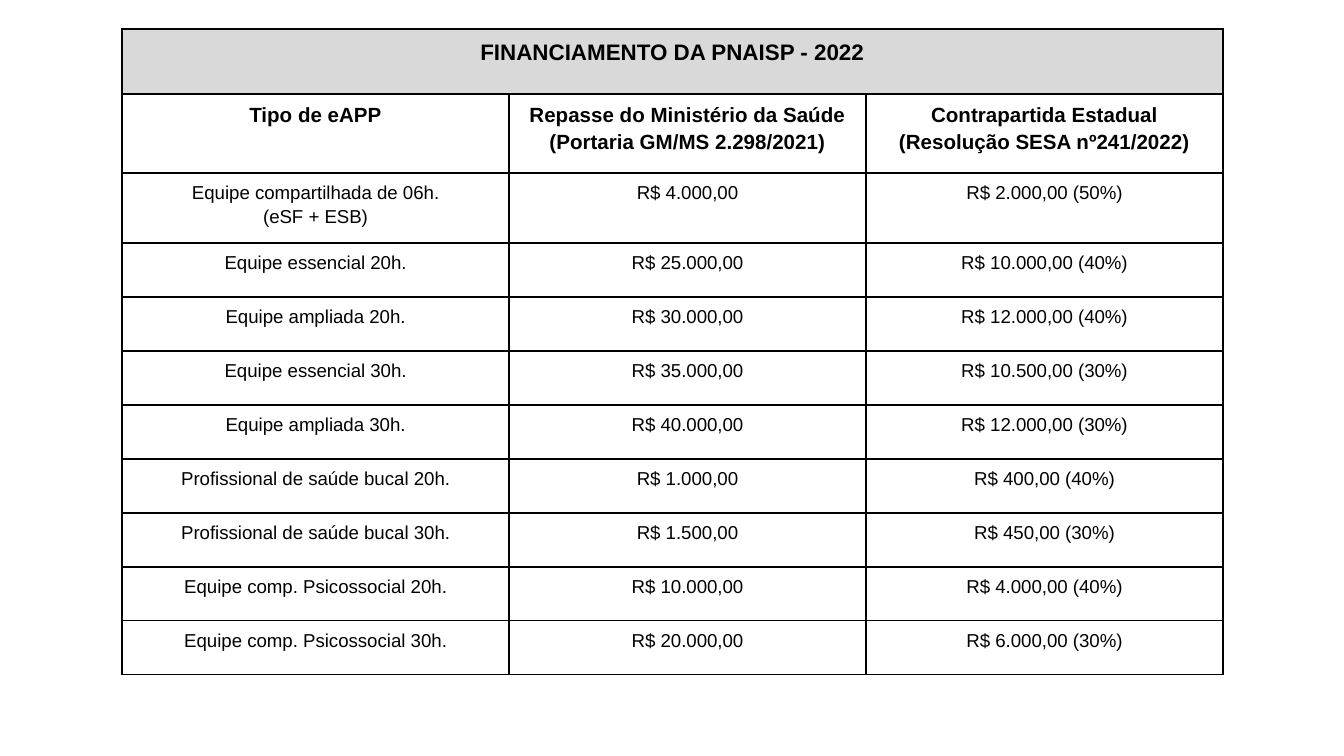
import pptx
import pptx.dml.color
import pptx.enum.text
import pptx.oxml
import pptx.oxml.ns
import pptx.util

SCALE = 914400 / 134.4
COLORS = {"ink": "000000", "banner": "D9D9D9"}
BORDER_WIDTH = pptx.util.Pt(0.96)


def px(length):
    return pptx.util.Emu(round(length * SCALE))


def add_borders(cell):
    properties = cell._tc.get_or_add_tcPr()
    for side in ("lnL", "lnR", "lnT", "lnB"):
        properties.append(pptx.oxml.parse_xml(
            f'<a:{side} {pptx.oxml.ns.nsdecls("a")} w="{BORDER_WIDTH}">'
            f'<a:solidFill><a:srgbClr val="{COLORS["ink"]}"/></a:solidFill>'
            f'<a:prstDash val="solid"/></a:{side}>'))


funding_rows = [
    ["FINANCIAMENTO DA PNAISP - 2022", "", ""],
    ["Tipo de eAPP",
     "Repasse do Ministério da Saúde (Portaria GM/MS 2.298/2021)",
     "Contrapartida Estadual\n(Resolução SESA nº241/2022)"],
    ["Equipe compartilhada de 06h.\n(eSF + ESB)", "R$ 4.000,00", "R$ 2.000,00 (50%)"],
    ["Equipe essencial 20h.", "R$ 25.000,00", "R$ 10.000,00 (40%)"],
    ["Equipe ampliada 20h.", "R$ 30.000,00", "R$ 12.000,00 (40%)"],
    ["Equipe essencial 30h.", "R$ 35.000,00", "R$ 10.500,00 (30%)"],
    ["Equipe ampliada 30h.", "R$ 40.000,00", "R$ 12.000,00 (30%)"],
    ["Profissional de saúde bucal 20h.", "R$ 1.000,00", "R$ 400,00 (40%)"],
    ["Profissional de saúde bucal 30h.", "R$ 1.500,00", "R$ 450,00 (30%)"],
    ["Equipe comp. Psicossocial 20h.", "R$ 10.000,00", "R$ 4.000,00 (40%)"],
    ["Equipe comp. Psicossocial 30h.", "R$ 20.000,00", "R$ 6.000,00 (30%)"],
]
column_widths = [387, 357, 357]
row_heights = [65, 79, 70] + [54] * 8

banner_font = {"name": "Arial", "size": pptx.util.Pt(12), "bold": True}
heading_font = {**banner_font, "size": pptx.util.Pt(11)}
body_font = {**banner_font, "size": pptx.util.Pt(10), "bold": False}
row_fonts = [banner_font, heading_font] + [body_font] * 9

cell_format = {
    "margin_left": px(4), "margin_right": px(4),
    "margin_top": px(7), "margin_bottom": px(7),
    "vertical_anchor": pptx.enum.text.MSO_ANCHOR.TOP,
}
paragraph_format = {
    "alignment": pptx.enum.text.PP_ALIGN.CENTER,
    "line_spacing": 1.15,
}

deck = pptx.Presentation()
deck.slide_width = px(1344)
deck.slide_height = px(756)
slide = deck.slides.add_slide(deck.slide_layouts[6])

funding = slide.shapes.add_table(
    len(funding_rows), len(column_widths), px(122), px(29),
    px(sum(column_widths)), px(sum(row_heights))).table
funding.first_row = False
funding.horz_banding = False
for column, width in zip(funding.columns, column_widths):
    column.width = px(width)
for row, height in zip(funding.rows, row_heights):
    row.height = px(height)
funding.cell(0, 0).merge(funding.cell(0, 2))

for row_index, (texts, font_format) in enumerate(zip(funding_rows, row_fonts)):
    for column_index, text in enumerate(texts):
        cell = funding.cell(row_index, column_index)
        for name, value in cell_format.items():
            setattr(cell, name, value)
        add_borders(cell)
        if row_index == 0:
            cell.fill.solid()
            cell.fill.fore_color.rgb = pptx.dml.color.RGBColor.from_string(COLORS["banner"])
        else:
            cell.fill.background()
        cell.text = text
        for paragraph in cell.text_frame.paragraphs:
            for name, value in paragraph_format.items():
                setattr(paragraph, name, value)
            for run in paragraph.runs:
                for name, value in font_format.items():
                    setattr(run.font, name, value)
                run.font.color.rgb = pptx.dml.color.RGBColor.from_string(COLORS["ink"])

deck.save("out.pptx")
